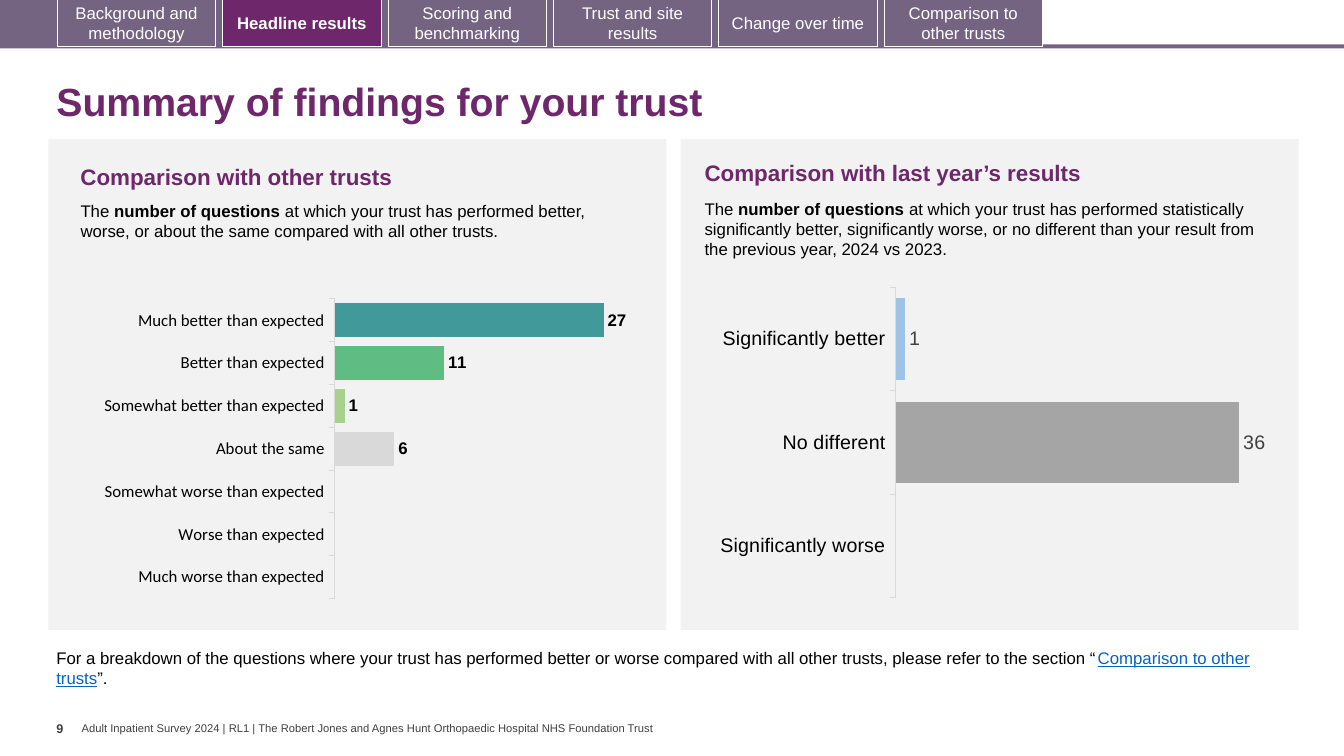
from lxml import etree
from pptx import Presentation
from pptx import util as u
from pptx.chart.data import CategoryChartData
from pptx.dml.color import RGBColor
from pptx.enum import chart as charts, shapes, text
from pptx.oxml import ns

WIDTH, HEIGHT = 13.33, 7.5
COLOURS = {
    "bar": "756382", "accent": "6D276A", "white": "FFFFFF", "black": "000000",
    "panel": "F2F2F2", "grey": "404040", "axis": "D9D9D9", "link": "0563C1",
}
TABS = ["Background and methodology", "Headline results", "Scoring and benchmarking",
        "Trust and site results", "Change over time", "Comparison to other trusts"]
CURRENT_TAB = "Headline results"
TRUSTS_RESULTS = [
    ("Much better than expected", 27, "419999"),
    ("Better than expected", 11, "5FBD83"),
    ("Somewhat better than expected", 1, "A9D18E"),
    ("About the same", 6, "D9D9D9"),
    ("Somewhat worse than expected", None, "FFD966"),
    ("Worse than expected", None, "F1BE48"),
    ("Much worse than expected", None, "E87722"),
]
YEAR_RESULTS = [
    ("Significantly better", 1, "9DC3E6"),
    ("No different", 36, "A5A5A5"),
    ("Significantly worse", None, "7030A0"),
]


def rgb(name):
    return RGBColor.from_string(COLOURS.get(name, name))


def inches(box):
    return [u.Inches(length) for length in box]


def style_font(font, size, colour, bold=False, name="Arial"):
    font.name, font.size, font.bold = name, u.Pt(size), bold
    font.color.rgb = rgb(colour)


def add_box(slide, box, fill=None, line=None):
    shape = slide.shapes.add_shape(shapes.MSO_SHAPE.RECTANGLE, *inches(box))
    shape.shadow.inherit = False
    if fill:
        shape.fill.solid()
        shape.fill.fore_color.rgb = rgb(fill)
    else:
        shape.fill.background()
    if line:
        shape.line.color.rgb = rgb(line)
        shape.line.width = u.Pt(0.75)
    else:
        shape.line.fill.background()
    return shape


def add_text(slide, box, runs, size, colour="black", bold=False):
    """Add a one-paragraph text box and return its frame and its runs."""
    frame = slide.shapes.add_textbox(*inches(box)).text_frame
    frame.word_wrap = True
    paragraph = frame.paragraphs[0]
    style_font(paragraph.font, size, colour, bold)
    for words in runs:
        paragraph.add_run().text = words
    return frame, paragraph.runs


def add_navigation(slide, box):
    left, top, width, height = box
    add_box(slide, (left, top + height - 0.04, width, 0.04), "bar")
    add_box(slide, (left, top, 10.37, height - 0.01), "bar")
    pitch = 1.64
    for column, label in enumerate(TABS):
        current = label == CURRENT_TAB
        tab = add_box(slide, (left + 0.6 + column * pitch, top - 0.01, pitch - 0.07, height - 0.01),
                      "accent" if current else None, "white")
        frame = tab.text_frame
        frame.word_wrap = True
        frame.vertical_anchor = text.MSO_ANCHOR.MIDDLE
        paragraph = frame.paragraphs[0]
        paragraph.text = label
        paragraph.alignment = text.PP_ALIGN.CENTER
        style_font(paragraph.font, 12, "white", current)


def add_title(slide, box):
    title = slide.shapes.title
    title.left, title.top, title.width, title.height = inches(box)
    frame = title.text_frame
    frame.auto_size = text.MSO_AUTO_SIZE.NONE
    frame.vertical_anchor = text.MSO_ANCHOR.MIDDLE
    paragraph = frame.paragraphs[0]
    paragraph.text = "Summary of findings for your trust"
    paragraph.alignment = text.PP_ALIGN.LEFT
    paragraph.line_spacing = 0.9
    style_font(paragraph.font, 28, "accent", True)


def place_plot(chart, shares):
    """Fix the inner plot area as shares (x, y, w, h) of the chart."""
    plot_area = chart._chartSpace.chart.plotArea
    for layout in plot_area.findall(ns.qn("c:layout")):
        plot_area.remove(layout)
    layout = etree.Element(ns.qn("c:layout"))
    manual = etree.SubElement(layout, ns.qn("c:manualLayout"))
    settings = [("layoutTarget", "inner"), ("xMode", "edge"), ("yMode", "edge"), *zip("xywh", shares)]
    for tag, value in settings:
        etree.SubElement(manual, ns.qn(f"c:{tag}")).set("val", str(value))
    plot_area.insert(0, layout)


def add_results_chart(slide, box, results, maximum, plot_shares, axis_font, label_font):
    names, values, colours = zip(*results)
    data = CategoryChartData(number_format="0")
    data.categories = names
    data.add_series("Series 1", values)
    chart = slide.shapes.add_chart(charts.XL_CHART_TYPE.BAR_CLUSTERED, *inches(box), data).chart
    chart.has_legend = chart.has_title = False
    style_font(chart.font, **axis_font)
    place_plot(chart, plot_shares)

    category_axis, value_axis = chart.category_axis, chart.value_axis
    category_axis.reverse_order = True
    category_axis.major_tick_mark = charts.XL_TICK_MARK.OUTSIDE
    category_axis.format.line.color.rgb = rgb("axis")
    category_axis.format.line.width = u.Pt(0.75)
    style_font(category_axis.tick_labels.font, **axis_font)
    value_axis.visible = value_axis.has_major_gridlines = False
    value_axis.minimum_scale, value_axis.maximum_scale = 0, maximum

    plot = chart.plots[0]
    plot.gap_width, plot.vary_by_categories = 27, False
    series = plot.series[0]
    for index, colour in enumerate(colours):
        fill = series.points[index].format.fill
        fill.solid()
        fill.fore_color.rgb = rgb(colour)
    labels = series.data_labels
    labels.show_value = True
    labels.position = charts.XL_LABEL_POSITION.OUTSIDE_END
    labels.number_format, labels.number_format_is_linked = "0", False
    style_font(labels.font, **label_font)


def add_panel(slide, box, heading, heading_at, explanation, text_at, text_width, chart_box, **chart):
    """Draw a grey panel; the inner positions are offsets from its corner."""
    left, top, width, _ = box
    add_box(slide, box, "panel")
    add_text(slide, (left + heading_at[0], top + heading_at[1], width - 0.6, 0.37),
             [heading], 16, "accent", True)
    _, runs = add_text(slide, (left + text_at[0], top + text_at[1], text_width, 0.71),
                       ["The ", "number of questions ", explanation], 12)
    runs[1].font.bold = True
    x, y, chart_width, chart_height = chart_box
    add_results_chart(slide, (left + x, top + y, chart_width, chart_height), **chart)


def add_footer(slide, box):
    left, top, width, height = box
    _, runs = add_text(slide, (left, top, width, 0.5), [
        "For a breakdown of the questions where your trust has performed better or worse "
        "compared with all other trusts, please refer to the section “",
        "Comparison to other trusts", "”."], 12)
    runs[1].font.underline = True
    runs[1].font.color.rgb = rgb("link")
    line_top = top + height - 0.4
    notes = [(0.1, 0.25, "9", 9, True),
             (0.35, 6.1, "Adult Inpatient Survey 2024 | RL1 | The Robert Jones and Agnes Hunt "
                         "Orthopaedic Hospital NHS Foundation Trust", 8, False)]
    for offset, note_width, words, size, bold in notes:
        frame, _ = add_text(slide, (left + offset, line_top, note_width, 0.25),
                            [words], size, "grey", bold)
        frame.margin_left = frame.margin_right = 0
        frame.vertical_anchor = text.MSO_ANCHOR.MIDDLE


def main():
    presentation = Presentation()
    presentation.slide_width, presentation.slide_height = inches((WIDTH, HEIGHT))
    slide = presentation.slides.add_slide(presentation.slide_layouts[5])
    add_navigation(slide, (-0.03, 0, WIDTH + 0.03, 0.48))
    add_title(slide, (0.46, 0.67, 12.49, 0.72))
    panel_top, panel_width, panel_height = 1.38, 6.13, 4.87
    add_panel(
        slide, (0.48, panel_top, panel_width, panel_height),
        "Comparison with other trusts", (0.22, 0.19),
        "at which your trust has performed better, worse, or about the same "
        "compared with all other trusts.", (0.22, 0.56), 5.29, (-0.07, 1.34, 6.23, 3.41),
        results=TRUSTS_RESULTS, maximum=30, plot_shares=(0.467, 0.072, 0.476, 0.872),
        axis_font={"size": 12, "colour": "black", "name": "Calibri"},
        label_font={"size": 12, "colour": "black", "bold": True})
    add_panel(
        slide, (0.48 + panel_width + 0.14, panel_top, panel_width, panel_height),
        "Comparison with last year’s results", (0.14, 0.15),
        "at which your trust has performed statistically significantly better, significantly "
        "worse, or no different than your result from the previous year, 2024 vs 2023.",
        (0.14, 0.54), 5.74, (-0.11, 1.35, 6.23, 3.39),
        results=YEAR_RESULTS, maximum=40, plot_shares=(0.36, 0.035, 0.608, 0.909),
        axis_font={"size": 14, "colour": "black"},
        label_font={"size": 14, "colour": "grey"})
    add_footer(slide, (0.46, 6.38, 12.21, HEIGHT - 6.38))
    presentation.save("out.pptx")


if __name__ == "__main__":
    main()
